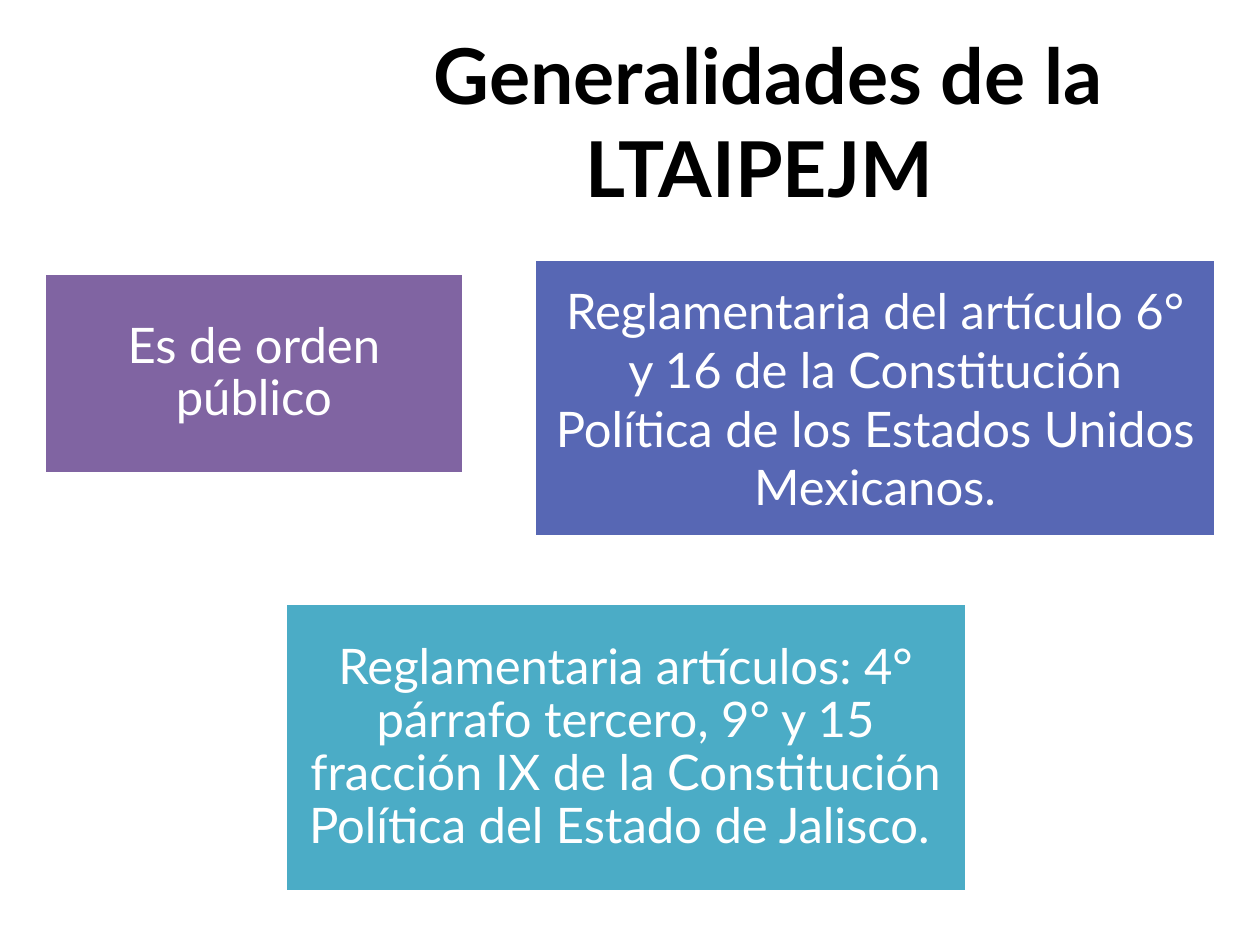
import pptx
import pptx.util
import pptx.dml.color
import pptx.enum.shapes
import pptx.enum.text

Inches, Pt = pptx.util.Inches, pptx.util.Pt
COLORS = {"black": "000000", "white": "FFFFFF", "purple": "8064A2",
          "blue": "5767B4", "teal": "4BACC6"}


def rgb(name):
    return pptx.dml.color.RGBColor.from_string(COLORS[name])


class Deck:
    """Holds the style and the current slide, and draws each kind of element."""

    font = "Lato"

    def __init__(self, prs):
        self.s = prs.slides.add_slide(prs.slide_layouts[6])

    def add_text(self, sp, text, size, color, bold=False, spacing=1.0, inset=(0.1, 0.05)):
        tf = sp.text_frame
        x, y = map(Inches, inset)
        frame = {"word_wrap": True, "vertical_anchor": pptx.enum.text.MSO_ANCHOR.MIDDLE,
                 "margin_left": x, "margin_right": x, "margin_top": y, "margin_bottom": y}
        for key, value in frame.items():
            setattr(tf, key, value)
        p = tf.paragraphs[0]
        p.alignment = pptx.enum.text.PP_ALIGN.CENTER
        p.line_spacing = spacing
        r = p.add_run()
        r.text = text
        for key, value in {"name": self.font, "size": Pt(size), "bold": bold}.items():
            setattr(r.font, key, value)
        r.font.color.rgb = rgb(color)

    def title(self, box, text):
        sp = self.s.shapes.add_textbox(*map(Inches, box))
        self.add_text(sp, text, 44, "black", bold=True)

    def card(self, box, fill, text, spacing):
        sp = self.s.shapes.add_shape(pptx.enum.shapes.MSO_SHAPE.RECTANGLE, *map(Inches, box))
        sp.shadow.inherit = False
        sp.fill.solid()
        sp.fill.fore_color.rgb = rgb(fill)
        sp.line.color.rgb = rgb("white")
        sp.line.width = Pt(2)
        self.add_text(sp, text, 28, "white", spacing=spacing, inset=(0.12, 0.12))


def main():
    prs = pptx.Presentation()
    prs.slide_width, prs.slide_height = Inches(10), Inches(7.5)
    deck = Deck(prs)
    deck.title((2.32, 0.52, 7.56, 0.87), "Generalidades de la LTAIPEJM ")
    cards = [
        ((0.35, 2.17, 3.33, 1.59), "purple", "Es de orden público", 0.9),
        ((4.24, 2.06, 5.41, 2.2), "blue",
         "Reglamentaria del artículo 6° y 16 de la Constitución Política "
         "de los Estados Unidos Mexicanos.", 1.0),
        ((2.26, 4.79, 5.41, 2.29), "teal",
         "Reglamentaria artículos: 4° párrafo tercero, 9° y 15 fracción IX "
         "de la Constitución Política del Estado de Jalisco. ", 0.9),
    ]
    for card in cards:
        deck.card(*card)
    prs.save("out.pptx")


if __name__ == "__main__":
    main()
